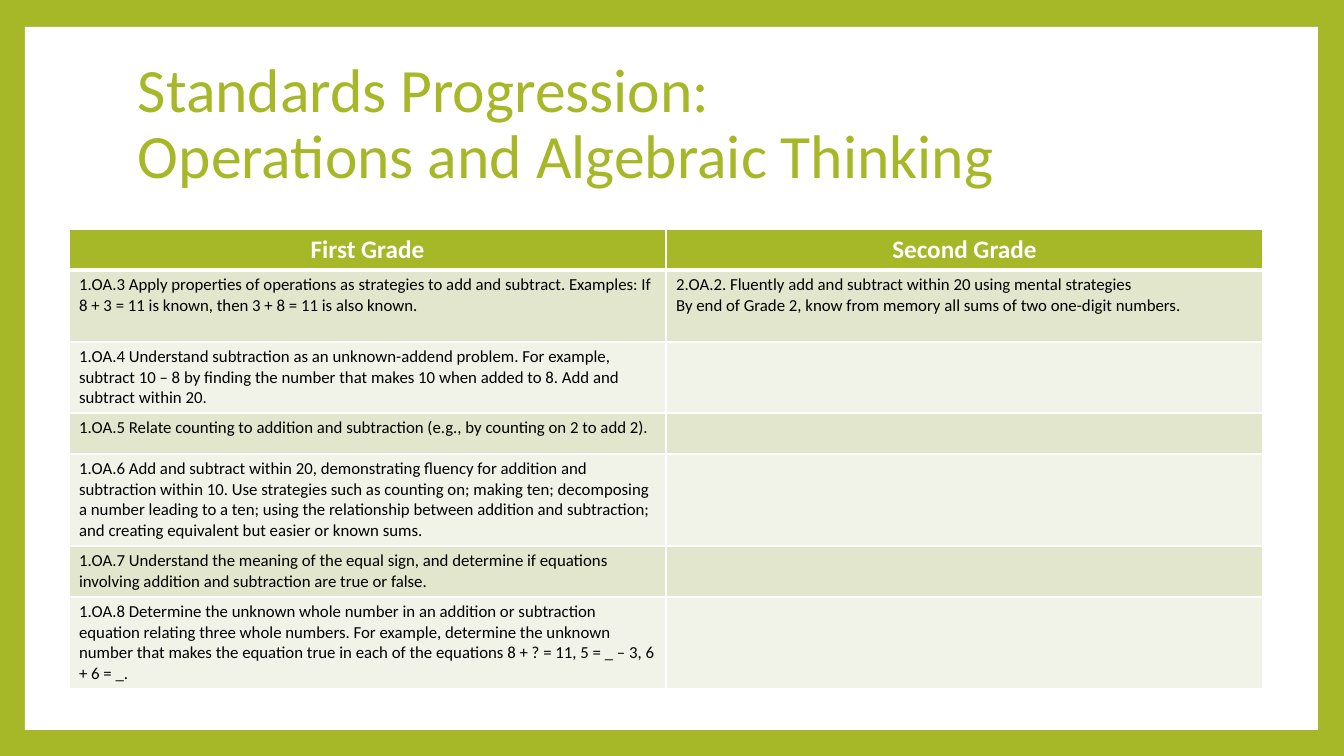
from lxml import etree
from pptx import Presentation, util as u
from pptx.dml.color import RGBColor
from pptx.enum import shapes, text
from pptx.oxml.ns import qn

SCALE = 12192000 / 1344
FONT = "Calibri"
GREEN, WHITE, BLACK = "A6B727", "FFFFFF", "000000"
BANDS = ["E1E6CD", "F1F3E8"]
HEADS = ["First Grade", "Second Grade"]
ROWS = [
    (72, "1.OA.3 Apply properties of operations as strategies to add and subtract. "
         "Examples: If 8 + 3 = 11 is known, then 3 + 8 = 11 is also known.",
     "2.OA.2. Fluently add and subtract within 20 using mental strategies\n"
     "By end of Grade 2, know from memory all sums of two one-digit numbers."),
    (71, "1.OA.4 Understand subtraction as an unknown-addend problem. For example, "
         "subtract 10 – 8 by finding the number that makes 10 when added to 8. "
         "Add and subtract within 20.", ""),
    (41, "1.OA.5 Relate counting to addition and subtraction "
         "(e.g., by counting on 2 to add 2).", ""),
    (92, "1.OA.6 Add and subtract within 20, demonstrating fluency for addition and "
         "subtraction within 10. Use strategies such as counting on; making ten; "
         "decomposing a number leading to a ten; using the relationship between "
         "addition and subtraction; and creating equivalent but easier or known sums.", ""),
    (51, "1.OA.7 Understand the meaning of the equal sign, and determine if equations "
         "involving addition and subtraction are true or false.", ""),
    (92, "1.OA.8 Determine the unknown whole number in an addition or subtraction "
         "equation relating three whole numbers. For example, determine the unknown "
         "number that makes the equation true in each of the equations "
         "8 + ? = 11, 5 = _ – 3, 6 + 6 = _.", ""),
]


def px(n):
    return u.Emu(round(n * SCALE))


def paint(fill, color):
    fill.solid()
    fill.fore_color.rgb = RGBColor.from_string(color)


def style(frame, size, color, bold=False, align=text.PP_ALIGN.LEFT):
    for para in frame.paragraphs:
        para.alignment = align
        font = para.font
        font.name, font.size, font.bold = FONT, u.Pt(size), bold
        font.color.rgb = RGBColor.from_string(color)


def add_panel(slide, x, y, w, h):
    panel = slide.shapes.add_shape(
        shapes.MSO_SHAPE.RECTANGLE, px(x), px(y), px(w), px(h))
    panel.shadow.inherit = False
    paint(panel.fill, WHITE)
    panel.line.fill.background()


def add_title(slide, x, y, w, h, words):
    frame = slide.shapes.add_textbox(px(x), px(y), px(w), px(h)).text_frame
    frame.word_wrap = True
    frame.vertical_anchor = text.MSO_ANCHOR.MIDDLE
    frame.text = words
    style(frame, 44, GREEN)
    frame.paragraphs[0].line_spacing = 0.9


def edge(cell, low):
    """Draw white borders, the lower one `low` points wide."""
    props = cell._tc.get_or_add_tcPr()
    for side, width in zip("LRTB", (1, 1, 1, low)):
        line = etree.SubElement(props, qn(f"a:ln{side}"), w=str(u.Pt(width)))
        fill = etree.SubElement(line, qn("a:solidFill"))
        etree.SubElement(fill, qn("a:srgbClr"), val=WHITE)


def add_grid(slide, x, y, w, head):
    high = [head] + [row[0] for row in ROWS]
    table = slide.shapes.add_table(
        len(high), len(HEADS), px(x), px(y), px(w), px(sum(high))).table
    for col in table.columns:
        col.width = px(w / len(HEADS))
    for i, words in enumerate([HEADS] + [row[1:] for row in ROWS]):
        table.rows[i].height = px(high[i])
        for j, word in enumerate(words):
            cell = table.cell(i, j)
            cell.text = word
            edge(cell, 1 if i else 3)
            if i:
                paint(cell.fill, BANDS[(i - 1) % 2])
                style(cell.text_frame, 12, BLACK)
            else:
                paint(cell.fill, GREEN)
                style(cell.text_frame, 18, WHITE, True, text.PP_ALIGN.CENTER)


def main():
    deck = Presentation()
    deck.slide_width, deck.slide_height = px(1344), px(756)
    slide = deck.slides.add_slide(deck.slide_layouts[6])
    paint(slide.background.fill, GREEN)
    add_panel(slide, 25, 27, 1293, 703)
    add_title(slide, 128, 51, 1089, 149,
              "Standards Progression:\vOperations and Algebraic Thinking")
    add_grid(slide, 69, 229, 1194, 41)
    deck.save("out.pptx")


if __name__ == "__main__":
    main()
